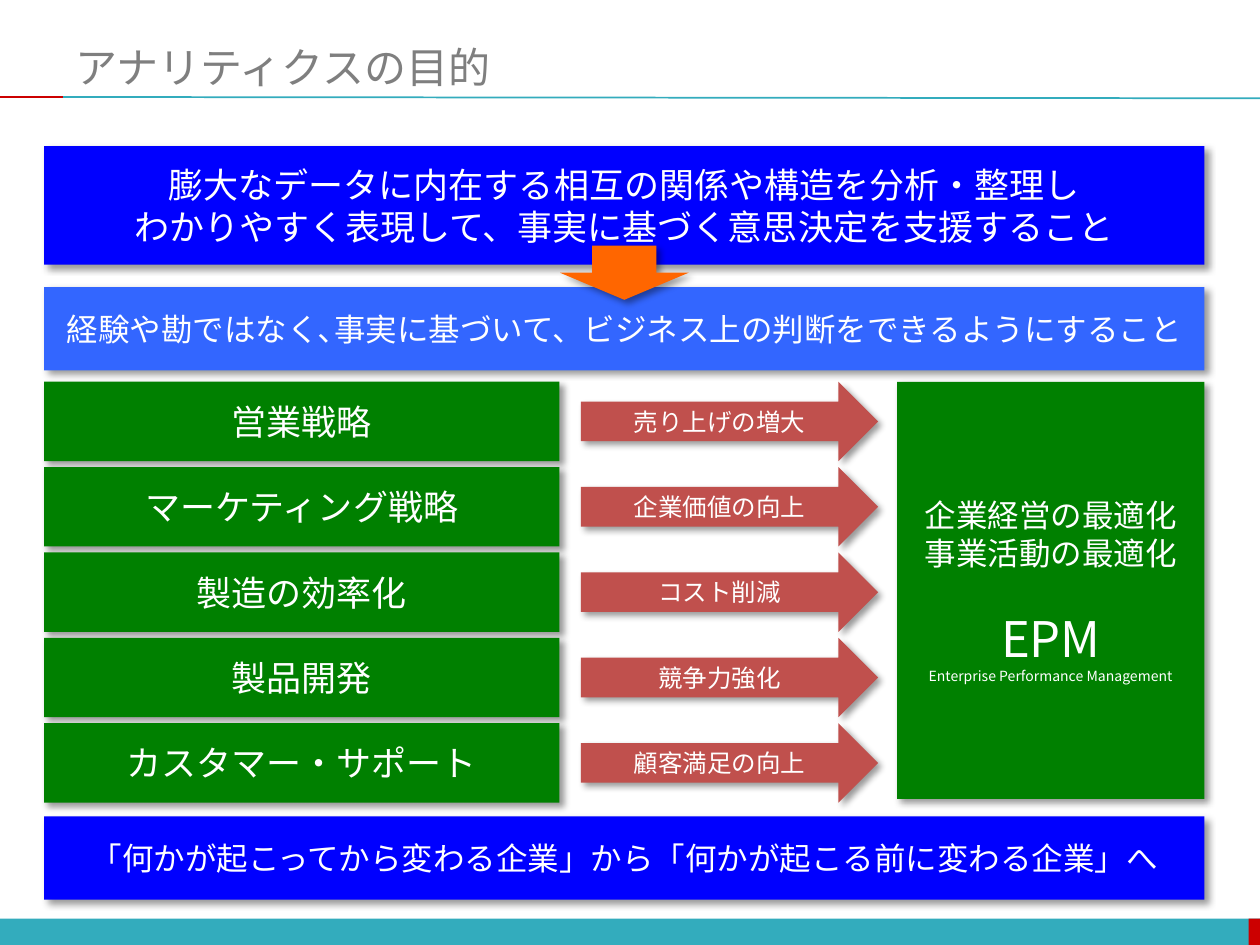
from lxml import etree
from pptx import Presentation
from pptx.dml.color import RGBColor
from pptx.enum.shapes import MSO_CONNECTOR, MSO_SHAPE
from pptx.enum.text import MSO_ANCHOR, PP_ALIGN
from pptx.oxml import parse_xml
from pptx.oxml.ns import nsdecls, qn
from pptx.util import Pt

PX = 9144  # 100 px to the inch
RECT, RIGHT, DOWN = MSO_SHAPE.RECTANGLE, MSO_SHAPE.RIGHT_ARROW, MSO_SHAPE.DOWN_ARROW
LINE = MSO_CONNECTOR.STRAIGHT
MIDDLE, CENTER, LEFT = MSO_ANCHOR.MIDDLE, PP_ALIGN.CENTER, PP_ALIGN.LEFT

WHITE = RGBColor(0xFF, 0xFF, 0xFF)
GRAY = RGBColor(0x7F, 0x7F, 0x7F)
TEAL = RGBColor(0x33, 0xAC, 0xBD)
RED = RGBColor(0xCC, 0x00, 0x00)
NAVY = RGBColor(0x00, 0x00, 0xFF)
BLUE = RGBColor(0x33, 0x66, 0xFF)
GREEN = RGBColor(0x00, 0x80, 0x00)
BRICK = RGBColor(0xC0, 0x50, 0x4D)
ORANGE = RGBColor(0xFF, 0x66, 0x00)
SANS, LATIN = "Noto Sans CJK JP", "Calibri"

ROWS = [
    ("営業戦略", "売り上げの増大"),
    ("マーケティング戦略", "企業価値の向上"),
    ("製造の効率化", "コスト削減"),
    ("製品開発", "競争力強化"),
    ("カスタマー・サポート", "顧客満足の向上"),
]
SHADOW = (
    f'<a:effectLst {nsdecls("a")}><a:outerShdw blurRad="50800" dist="38100" '
    'dir="2700000" algn="tl" rotWithShape="0"><a:srgbClr val="000000">'
    '<a:alpha val="40000"/></a:srgbClr></a:outerShdw></a:effectLst>'
)


def scale(*box):
    return [round(v * PX) for v in box]


def write(shape, lines, color=WHITE, font=SANS, align=CENTER):
    """Fill a shape with (text, size, space before) lines."""
    frame = shape.text_frame
    frame.word_wrap = True
    frame.vertical_anchor = MIDDLE
    for i, (text, size, gap) in enumerate(lines):
        par = frame.paragraphs[0] if i == 0 else frame.add_paragraph()
        par.text = text
        par.alignment = align
        if gap:
            par.space_before = Pt(gap)
        par.font.size = Pt(size)
        par.font.name = font
        par.font.color.rgb = color


def block(slide, kind, box, color, lines=(), shade=True):
    shape = slide.shapes.add_shape(kind, *scale(*box))
    shape.fill.solid()
    shape.fill.fore_color.rgb = color
    shape.line.fill.background()
    shape.shadow.inherit = False
    if shade:
        props = shape._element.spPr
        props.replace(props.find(qn("a:effectLst")), parse_xml(SHADOW))
    write(shape, lines)


def rule(slide, ends, color):
    line = slide.shapes.add_connector(LINE, *scale(*ends))
    line.line.color.rgb = color
    line.line.width = Pt(1)
    etree.SubElement(line._element.spPr, qn("a:effectLst"))


def header(slide, x, y, w, h):
    rule(slide, (x + 50, y + h, x + w, y + h + 1), TEAL)
    rule(slide, (x, y + h, x + 50, y + h), RED)
    title = slide.shapes.add_textbox(*scale(x + 50, y + 30, w - 50, 46))
    write(title, [("アナリティクスの目的", 24, 0)], GRAY, LATIN, LEFT)


def footer(slide, x, y, w, h):
    block(slide, RECT, (x, y, w, h), TEAL, shade=False)
    block(slide, RECT, (x + w - 9, y, 9, h), RED, shade=False)


def goals(slide, x, y, w, h):
    """Two stacked statements joined by a down arrow."""
    block(slide, RECT, (x, y, w, 94), NAVY, [
        ("膨大なデータに内在する相互の関係や構造を分析・整理し", 20, 0),
        ("わかりやすく表現して、事実に基づく意思決定を支援すること", 20, 0)])
    block(slide, RECT, (x, y + h - 66, w, 66), BLUE, [
        ("経験や勘ではなく､事実に基づいて、ビジネス上の判断をできるようにすること", 18, 0)])
    block(slide, DOWN, (x + w / 2 - 51, y + 79, 102, 43), ORANGE)


def effects(slide, x, y, w, h):
    """Fields on the left, an arrow for each gain, the outcome on the right."""
    tall = 63
    step = (h - tall) / (len(ROWS) - 1)
    for i, (field, gain) in enumerate(ROWS):
        top = y + i * step
        block(slide, RECT, (x, top, 409, tall), GREEN, [(field, 20, 0)])
        block(slide, RIGHT, (x + 426, top, 236, tall), BRICK, [(gain, 14, 0)])
    block(slide, RECT, (x + w - 244, y, 244, h - 3), GREEN, [
        ("企業経営の最適化", 18, 0),
        ("事業活動の最適化", 18, 0),
        ("EPM", 28, 21),
        ("Enterprise Performance Management", 8, 0)])


def motto(slide, x, y, w, h):
    block(slide, RECT, (x, y, w, h), NAVY, [
        ("「何かが起こってから変わる企業」から「何かが起こる前に変わる企業」へ", 18, 0)])


def main():
    deck = Presentation()
    deck.slide_width, deck.slide_height = scale(1000, 750)
    slide = deck.slides.add_slide(deck.slide_layouts[6])
    footer(slide, 0, 729, 1000, 21)
    header(slide, 0, 0, 1000, 77)
    goals(slide, 35, 116, 921, 178)
    effects(slide, 35, 303, 921, 334)
    motto(slide, 35, 648, 921, 66)
    deck.save("out.pptx")


if __name__ == "__main__":
    main()
